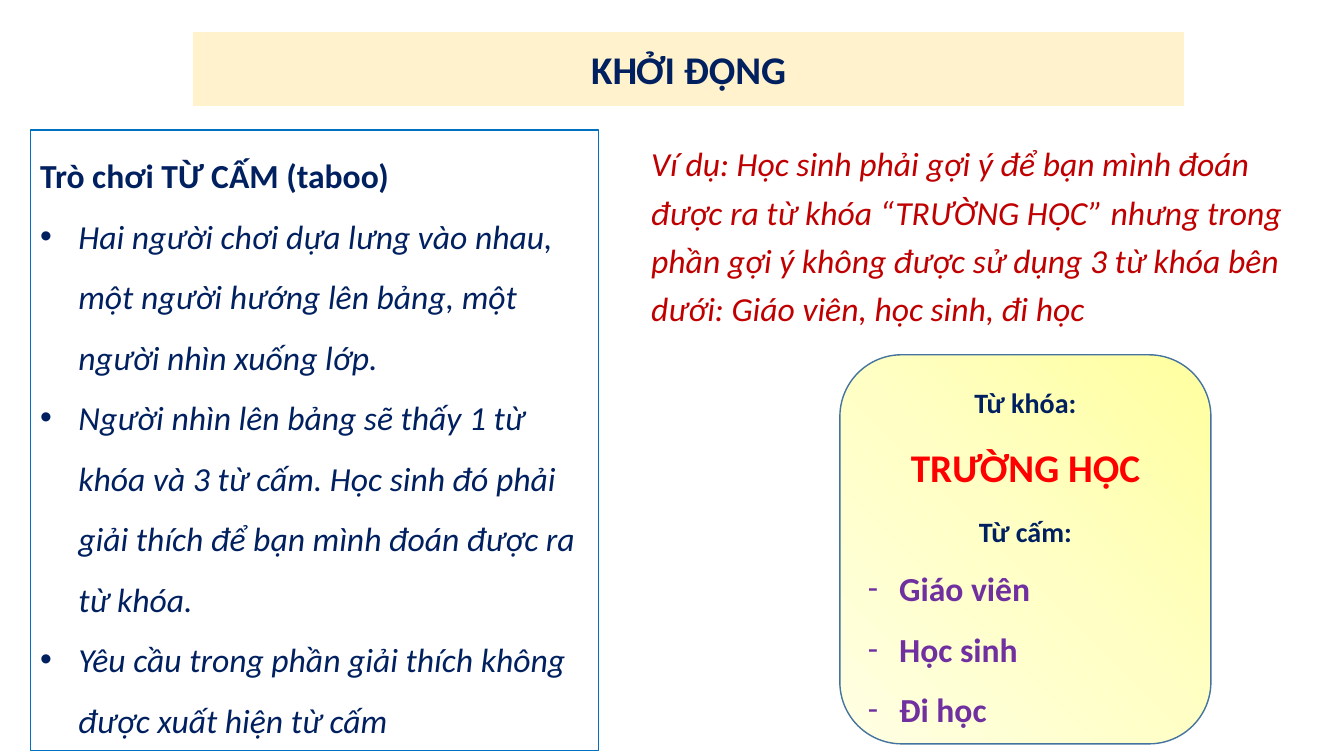
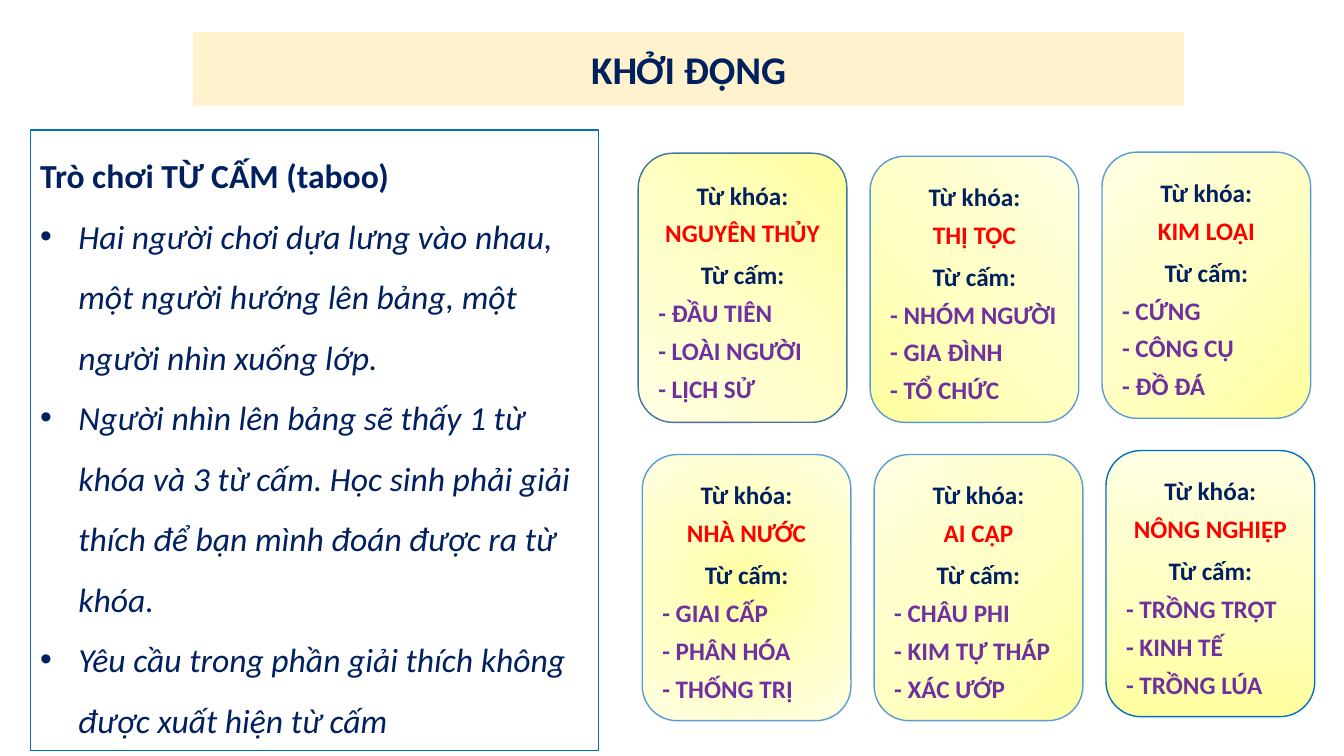
from lxml.etree import SubElement
from pptx import Presentation
from pptx.dml.color import RGBColor
from pptx.enum.shapes import MSO_SHAPE
from pptx.enum.text import MSO_ANCHOR, PP_ALIGN
from pptx.oxml import parse_xml
from pptx.oxml.ns import nsdecls, qn
from pptx.util import Inches, Pt

NAVY = RGBColor(0x00, 0x20, 0x60)
RED = RGBColor(0xFF, 0x00, 0x00)
DARK_RED = RGBColor(0xC0, 0x00, 0x00)
PURPLE = RGBColor(0x70, 0x30, 0xA0)
CREAM = RGBColor(0xFF, 0xF2, 0xCC)
WHITE = RGBColor(0xFF, 0xFF, 0xFF)
BLUE = RGBColor(0x00, 0x70, 0xC0)
SKY = RGBColor(0x5B, 0x9B, 0xD5)
STEEL = RGBColor(0x43, 0x73, 0x9E)
YELLOWS = (
    (0, RGBColor(0xFF, 0xFF, 0xA0)),
    (50, RGBColor(0xFF, 0xFF, 0xC5)),
    (100, RGBColor(0xFF, 0xFF, 0xE3)),
)
FONT = "Calibri"


def linear(degrees):
    return f'<a:lin ang="{degrees * 60000}" scaled="0"/>'


def radial(left, top):
    return (
        '<a:path path="circle"><a:fillToRect '
        f'l="{left * 1000}" t="{top * 1000}" '
        f'r="{(100 - left) * 1000}" b="{(100 - top) * 1000}"/></a:path>'
    )


class Deck:
    def __init__(self):
        self.presentation = Presentation()
        self.presentation.slide_width = Inches(13.33)
        self.presentation.slide_height = Inches(7.5)
        self.slide = None

    def add_slide(self, heading, game, rules):
        self.slide = self.presentation.slides.add_slide(self.presentation.slide_layouts[6])
        self.rules_panel(game, rules)
        self.title_band(heading)

    def box(self, preset, place, line, width=1):
        shape = self.slide.shapes.add_shape(preset, *map(Inches, place))
        shape.shadow.inherit = False
        shape.fill.background()
        shape.line.color.rgb = line
        shape.line.width = Pt(width)
        shape.text_frame.word_wrap = True
        return shape

    def add_text(self, frame, text, size, color, bold=False, italic=False,
                 align=PP_ALIGN.LEFT, spacing=1.0, before=0):
        paragraph = frame.paragraphs[0]
        if paragraph.text:
            paragraph = frame.add_paragraph()
        paragraph.text = text
        paragraph.alignment = align
        paragraph.line_spacing = spacing
        paragraph.space_before = Pt(before)
        font = paragraph.runs[0].font
        font.name = FONT
        font.size = Pt(size)
        font.color.rgb = color
        font.bold = bold
        font.italic = italic
        return paragraph

    def bullet(self, paragraph, mark, indent, typeface):
        properties = paragraph._p.get_or_add_pPr()
        properties.set("marL", str(Inches(indent)))
        properties.set("indent", str(-Inches(indent)))
        SubElement(properties, qn("a:buFont")).set("typeface", typeface)
        SubElement(properties, qn("a:buChar")).set("char", mark)

    def title_band(self, heading):
        band = self.box(MSO_SHAPE.RECTANGLE, (1.91, 0.31, 9.84, 0.75), WHITE)
        band.fill.solid()
        band.fill.fore_color.rgb = CREAM
        band.text_frame.vertical_anchor = MSO_ANCHOR.MIDDLE
        self.add_text(band.text_frame, heading, 28, NAVY, bold=True, align=PP_ALIGN.CENTER)

    def rules_panel(self, game, rules):
        panel = self.box(MSO_SHAPE.RECTANGLE, (0.3, 1.29, 5.64, 6.16), BLUE, 0.75)
        frame = panel.text_frame
        frame.vertical_anchor = MSO_ANCHOR.TOP
        self.add_text(frame, game, 24, NAVY, bold=True, spacing=1.5)
        for rule in rules:
            paragraph = self.add_text(frame, rule, 24, NAVY, italic=True, spacing=1.5)
            self.bullet(paragraph, "•", 0.38, "Arial")

    def example(self, text):
        box = self.slide.shapes.add_textbox(*map(Inches, (6.36, 1.29, 6.49, 2.01)))
        box.text_frame.word_wrap = True
        self.add_text(box.text_frame, text, 24, DARK_RED, italic=True, spacing=1.2)

    def card(self, place, keyword, taboo, shade, line, sizes=(18, 18, 18),
             spacing=1.25, gap=3, bulleted=False):
        card = self.box(MSO_SHAPE.ROUNDED_RECTANGLE, place, line)
        self.shade(card, shade)
        frame = card.text_frame
        frame.vertical_anchor = MSO_ANCHOR.MIDDLE
        label_size, keyword_size, taboo_size = sizes
        for text, size, color, before in (
            ("Từ khóa:", label_size, NAVY, 0),
            (keyword, keyword_size, RED, 0),
            ("Từ cấm:", label_size, NAVY, gap),
        ):
            self.add_text(frame, text, size, color, bold=True, align=PP_ALIGN.CENTER,
                          spacing=spacing, before=before)
        for word in taboo:
            text = word if bulleted else f"- {word}"
            paragraph = self.add_text(frame, text, taboo_size, PURPLE, bold=True,
                                      spacing=spacing)
            if bulleted:
                self.bullet(paragraph, "-", 0.31, FONT)

    def shade(self, shape, direction):
        stops = "".join(
            f'<a:gs pos="{position * 1000}"><a:srgbClr val="{color}"/></a:gs>'
            for position, color in YELLOWS
        )
        gradient = parse_xml(
            f'<a:gradFill {nsdecls("a")} rotWithShape="1">'
            f"<a:gsLst>{stops}</a:gsLst>{direction}</a:gradFill>"
        )
        shape.fill.gradient()
        properties = shape._element.spPr
        properties.replace(properties.find(qn("a:gradFill")), gradient)


HEADING = "KHỞI ĐỘNG"
GAME = "Trò chơi TỪ CẤM (taboo)"


def game_rules(speaker):
    return (
        "Hai người chơi dựa lưng vào nhau, một người hướng lên bảng, một người nhìn xuống lớp.",
        f"Người nhìn lên bảng sẽ thấy 1 từ khóa và 3 từ cấm. {speaker} phải giải thích "
        "để bạn mình đoán được ra từ khóa.",
        "Yêu cầu trong phần giải thích không được xuất hiện từ cấm",
    )


CARD_ROWS = (
    (
        (1.52, 2.67, "NGUYÊN THỦY", ("ĐẦU TIÊN", "LOÀI NGƯỜI", "LỊCH SỬ"), linear(135), STEEL),
        (1.55, 2.64, "THỊ TỘC", ("NHÓM NGƯỜI", "GIA ĐÌNH", "TỔ CHỨC"), radial(0, 100), SKY),
        (1.51, 2.64, "KIM LOẠI", ("CỨNG", "CÔNG CỤ", "ĐỒ ĐÁ"), radial(100, 100), SKY),
    ),
    (
        (4.51, 2.64, "NHÀ NƯỚC", ("GIAI CẤP", "PHÂN HÓA", "THỐNG TRỊ"), radial(50, 50), SKY),
        (4.51, 2.64, "AI CẬP", ("CHÂU PHI", "KIM TỰ THÁP", "XÁC ƯỚP"), linear(225), SKY),
        (4.47, 2.64, "NÔNG NGHIỆP", ("TRỒNG TRỌT", "KINH TẾ", "TRỒNG LÚA"), linear(270), BLUE),
    ),
)


def main():
    deck = Deck()

    deck.add_slide(HEADING, GAME, game_rules("Học sinh đó"))
    deck.card((8.33, 3.52, 3.68, 3.86), "TRƯỜNG HỌC", ("Giáo viên", "Học sinh", "Đi học"),
              linear(135), STEEL, sizes=(20, 28, 24), spacing=1.5, gap=5.5, bulleted=True)
    deck.example(
        "Ví dụ: Học sinh phải gợi ý để bạn mình đoán được ra từ khóa “TRƯỜNG HỌC” "
        "nhưng trong phần gợi ý không được sử dụng 3 từ khóa bên dưới: "
        "Giáo viên, học sinh, đi học"
    )

    deck.add_slide(HEADING, GAME, game_rules("Học sinh"))
    for row, cards in enumerate(CARD_ROWS):
        for column, (top, height, keyword, taboo, shade, line) in enumerate(cards):
            left = 6.33 + 2.3 * column + 0.04 * row
            deck.card((left, top, 2.07, height), keyword, taboo, shade, line)

    deck.presentation.save("out.pptx")


if __name__ == "__main__":
    main()
